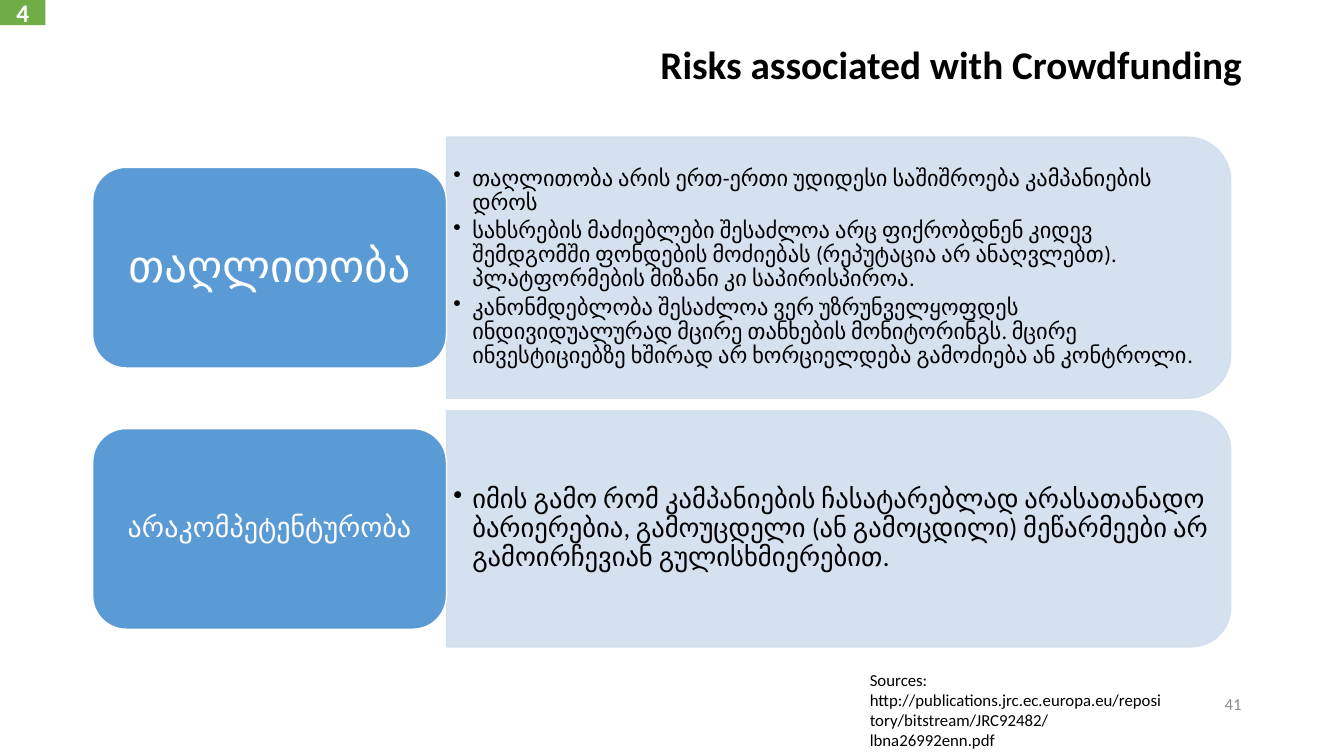
from lxml.etree import SubElement
from pptx import Presentation
from pptx.dml.color import RGBColor
from pptx.enum.shapes import MSO_SHAPE
from pptx.enum.text import MSO_ANCHOR, PP_ALIGN
from pptx.oxml.ns import qn
from pptx.util import Pt


def paint(color, code):
    color.rgb = RGBColor.from_string(code)


def write(shape, lines, size, code, para={}, frame={}, bold=False, bullet=False):
    text = shape.text_frame
    for key, value in {"word_wrap": True, **frame}.items():
        setattr(text, key, value)
    text.text = "\n".join(lines)
    for item in text.paragraphs:
        if bullet:
            props = item._p.get_or_add_pPr()
            props.set("marL", str(Pt(13.5)))
            props.set("indent", str(Pt(-13.5)))
            SubElement(props, qn("a:buChar"), char="•")
        for key, value in para.items():
            setattr(item, key, value)
        font = item.runs[0].font
        for key, value in {"name": "Calibri", "size": Pt(size), "bold": bold}.items():
            setattr(font, key, value)
        paint(font.color, code)


deck = Presentation()
deck.slide_width, deck.slide_height = Pt(960), Pt(540)
slide = deck.slides.add_slide(deck.slide_layouts[6])
shapes = slide.shapes

risks = [
    {
        "name": "თაღლითობა", "size": 32, "mid": 191.2, "tall": 186.5, "body": 16, "pad": 9.6,
        "points": [
            "თაღლითობა არის ერთ-ერთი უდიდესი საშიშროება კამპანიების დროს",
            "სახსრების მაძიებლები შესაძლოა არც ფიქრობდნენ კიდევ შემდგომში ფონდების მოძიებას (რეპუტაცია არ ანაღვლებთ). პლატფორმების მიზანი კი საპირისპიროა.",
            "კანონმდებლობა შესაძლოა ვერ უზრუნველყოფდეს ინდივიდუალურად მცირე თანხების მონიტორინგს. მცირე ინვესტიციებზე ხშირად არ ხორციელდება გამოძიება ან კონტროლი.",
        ],
    },
    {
        "name": "არაკომპეტენტურობა", "size": 20, "mid": 377.8, "tall": 168.5, "body": 19, "pad": 6,
        "points": [
            "იმის გამო რომ კამპანიების ჩასატარებლად არასათანადო ბარიერებია, გამოუცდელი (ან გამოცდილი) მეწარმეები არ გამოირჩევიან გულისხმიერებით.",
        ],
    },
]
left, wide, high = 66.2, 252.7, 143.3
edge, span = left + wide, 560.2

for risk in risks:
    mid, tall = risk["mid"], risk["tall"]
    panel = shapes.add_shape(
        MSO_SHAPE.ROUND_2_SAME_RECTANGLE,
        Pt(edge + (span - tall) / 2), Pt(mid - span / 2), Pt(tall), Pt(span))
    panel.rotation = 90
    label = shapes.add_shape(
        MSO_SHAPE.ROUNDED_RECTANGLE, Pt(left), Pt(mid - high / 2), Pt(wide), Pt(high))
    for shape, fill, line in ((panel, "D2DEEF", "D2DEEF"), (label, "5B9BD5", "FFFFFF")):
        shape.shadow.inherit = False
        shape.fill.solid()
        paint(shape.fill.fore_color, fill)
        paint(shape.line.color, line)
        shape.line.width = Pt(1)
    for color in panel._element.spPr.iter(qn("a:srgbClr")):
        SubElement(color, qn("a:alpha"), val="90000")

    room = tall - 18
    body = shapes.add_textbox(Pt(edge), Pt(mid - room / 2), Pt(552), Pt(room))
    write(body, risk["points"], risk["body"], "000000",
          {"line_spacing": 0.9, "space_after": Pt(risk["body"] * 0.18)},
          {"vertical_anchor": MSO_ANCHOR.MIDDLE, "margin_left": Pt(5), "margin_right": Pt(5),
           "margin_top": Pt(2.4), "margin_bottom": Pt(2.4)}, bullet=True)
    pad = Pt(risk["pad"])
    write(label, [risk["name"]], risk["size"], "FFFFFF",
          {"alignment": PP_ALIGN.CENTER, "line_spacing": 0.9},
          {"vertical_anchor": MSO_ANCHOR.MIDDLE, "margin_left": pad, "margin_right": pad})

page = shapes.add_textbox(Pt(678), Pt(488), Pt(216), Pt(28.8))
write(page, ["41"], 12, "8C8C8C", {"alignment": PP_ALIGN.RIGHT},
      {"vertical_anchor": MSO_ANCHOR.MIDDLE})

title = shapes.add_textbox(Pt(66), Pt(28.8), Pt(828), Pt(41))
write(title, ["Risks associated with Crowdfunding"], 28, "000000",
      {"alignment": PP_ALIGN.RIGHT, "line_spacing": 0.9}, bold=True)

source = shapes.add_textbox(Pt(614.2), Pt(474.5), Pt(226), Pt(65.5))
write(source, ["Sources: http://publications.jrc.ec.europa.eu/repository/bitstream/JRC92482/lbna26992enn.pdf"],
      12, "000000")

badge = shapes.add_shape(MSO_SHAPE.RECTANGLE, 0, 0, Pt(32.4), Pt(18))
badge.shadow.inherit = False
badge.fill.solid()
paint(badge.fill.fore_color, "70AD47")
badge.line.fill.background()
write(badge, ["4"], 18, "FFFFFF", {"alignment": PP_ALIGN.CENTER},
      {"vertical_anchor": MSO_ANCHOR.MIDDLE}, bold=True)

deck.save("out.pptx")
